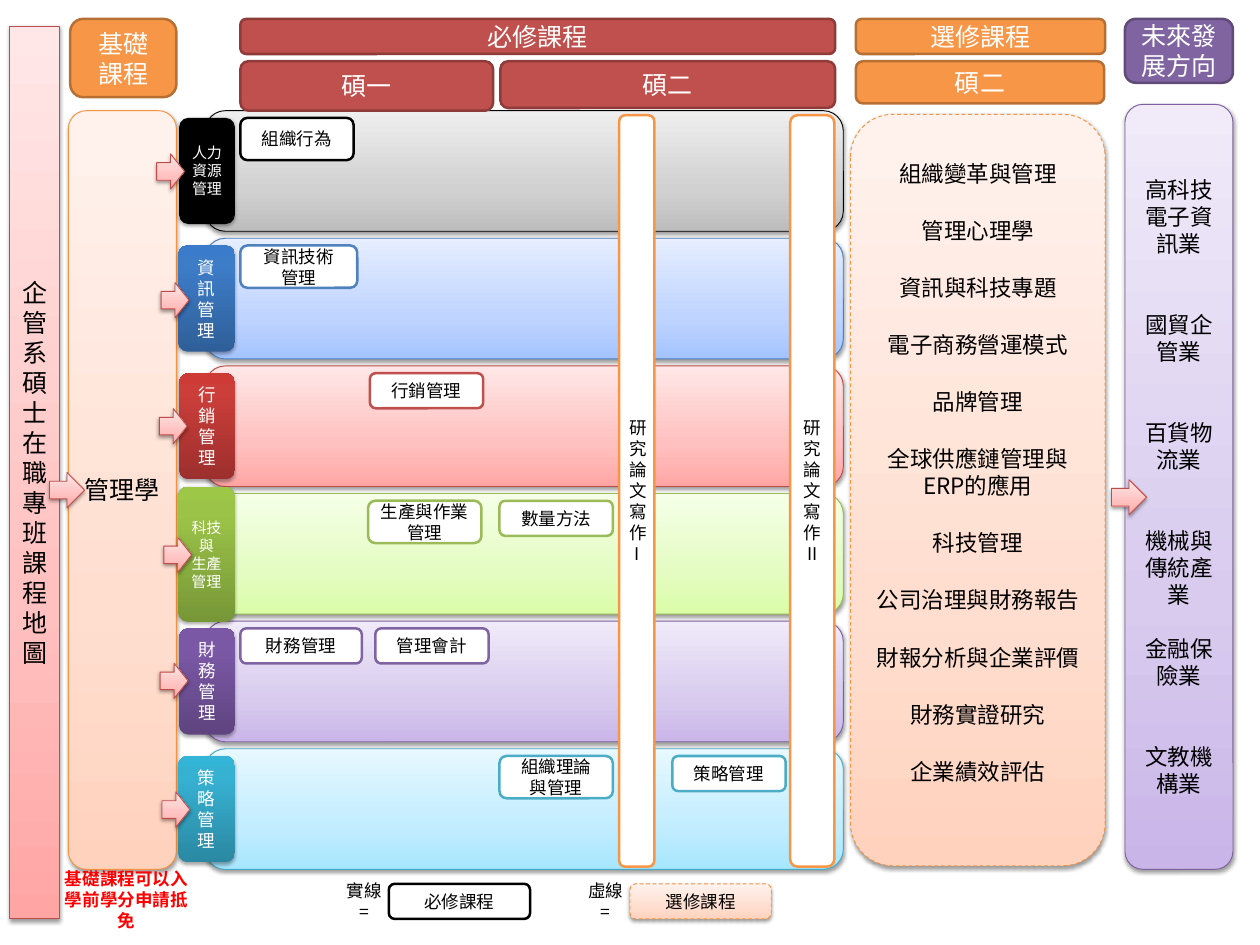
"""Build the course map slide of a part-time master's programme in business."""
from dataclasses import dataclass, replace
from typing import Optional, Union

from pptx import Presentation
from pptx.dml.color import RGBColor
from pptx.enum.dml import MSO_LINE
from pptx.enum.shapes import MSO_SHAPE
from pptx.enum.text import MSO_ANCHOR, MSO_AUTO_SIZE, PP_ALIGN
from pptx.oxml import parse_xml
from pptx.oxml.ns import nsdecls, qn
from pptx.util import Inches, Pt

ROUND, ARROW = MSO_SHAPE.ROUNDED_RECTANGLE, MSO_SHAPE.RIGHT_ARROW
MIDDLE, CENTER = MSO_ANCHOR.MIDDLE, PP_ALIGN.CENTER
NO_FIT, DASH = MSO_AUTO_SIZE.NONE, MSO_LINE.DASH
FONT = "Noto Sans CJK SC"
rgb = RGBColor.from_string

BLACK, WHITE, BRIGHT_RED = rgb("000000"), rgb("FFFFFF"), rgb("FF0000")
RED, RED_EDGE, RED_LINE = rgb("C0504D"), rgb("8E3B39"), rgb("BF4C48")
ORANGE, ORANGE_EDGE, ORANGE_LINE = rgb("F79646"), rgb("B76F34"), rgb("F69240")
PURPLE, PURPLE_EDGE, PURPLE_LINE = rgb("8064A2"), rgb("5F4A78"), rgb("7D60A0")
BLUE, BLUE_LINE = rgb("4F81BD"), rgb("4B7EBC")
GREEN, GREEN_LINE = rgb("9BBB59"), rgb("98B955")
AQUA, AQUA_LINE = rgb("4BACC6"), rgb("46AAC5")


@dataclass(frozen=True)
class Gradient:
    colors: tuple[RGBColor, RGBColor, RGBColor]
    middle: int = 35


GRAY_PALE = Gradient((rgb("BDBDBD"), rgb("D1D1D1"), rgb("EEEEEE")))
BLUE_PALE = Gradient((rgb("A4C4FF"), rgb("BFD4FF"), rgb("E6EEFF")))
RED_PALE = Gradient((rgb("FFA6A5"), rgb("FFC0BF"), rgb("FFE7E7")))
GREEN_PALE = Gradient((rgb("DAFDA7"), rgb("E4FCC2"), rgb("F5FFE7")))
PURPLE_PALE = Gradient((rgb("C9B5E8"), rgb("D8CBEE"), rgb("F0EAF9")))
AQUA_PALE = Gradient((rgb("A7E6FF"), rgb("C1EDFF"), rgb("E7F8FF")))
ORANGE_PALE = Gradient((rgb("FFD2BD"), rgb("FFDED0"), rgb("FFF2ED")))
BLUE_DEEP = Gradient((rgb("2F5F99"), rgb("3D7CC7"), rgb("3A7CCB")), 80)
RED_DEEP = Gradient((rgb("9C2F2D"), rgb("CB3E3A"), rgb("CE3B37")), 80)
GREEN_DEEP = Gradient((rgb("779737"), rgb("9BC348"), rgb("9DC746")), 80)
PURPLE_DEEP = Gradient((rgb("5F4480"), rgb("7B58A6"), rgb("7C57A8")), 80)
AQUA_DEEP = Gradient((rgb("2A88A2"), rgb("37B1D2"), rgb("34B4D6")), 80)


@dataclass(frozen=True)
class Style:
    fill: Union[RGBColor, Gradient, None] = None
    line: Optional[RGBColor] = None
    width: float = 2
    color: RGBColor = BLACK
    size: int = 14
    shadow: int = 0
    dashed: bool = False
    bold: bool = False


@dataclass(frozen=True)
class Area:
    name: str
    size: int
    pale: Gradient
    pale_line: RGBColor
    deep: Union[RGBColor, Gradient]
    accent: RGBColor
    arrow: tuple[float, float]


@dataclass(frozen=True)
class Course:
    name: str
    row: int
    left: float
    width: float = 1.26
    height: float = 0.39


def pale(fill: Gradient, line: RGBColor, size: int = 14, dashed: bool = False) -> Style:
    """Return the style of a softly shaded panel."""
    return Style(fill, line, 0.75, size=size, shadow=38, dashed=dashed)


RED_HEAD = Style(RED, RED_EDGE, color=WHITE, size=20)
ORANGE_HEAD = Style(ORANGE, ORANGE_EDGE, color=WHITE, size=20)
PURPLE_HEAD = Style(PURPLE, PURPLE_EDGE, color=WHITE, size=20)
ARROW_STYLE = pale(RED_PALE, RED_LINE)
THESIS = Style(WHITE, ORANGE)
PLAIN = Style()

AREAS = (
    Area("人力資源\n管理", 12, GRAY_PALE, BLACK, BLACK, BLACK, (1.74, 1.71)),
    Area("資訊管理", 14, BLUE_PALE, BLUE_LINE, BLUE_DEEP, BLUE, (1.79, 3.14)),
    Area("行銷管理", 14, RED_PALE, RED_LINE, RED_DEEP, RED, (1.77, 4.54)),
    Area("科技與\n生產管理", 12, GREEN_PALE, GREEN_LINE, GREEN_DEEP, GREEN, (1.82, 5.97)),
    Area("財務管理", 14, PURPLE_PALE, PURPLE_LINE, PURPLE_DEEP, PURPLE, (1.78, 7.37)),
    Area("策略管理", 14, AQUA_PALE, AQUA_LINE, AQUA_DEEP, AQUA, (1.8, 8.8)),
)
COURSES = (
    Course("組織行為", 0, 2.67, height=0.47),
    Course("資訊技術\n管理", 1, 2.67, 1.3, 0.47),
    Course("行銷管理", 2, 4.11),
    Course("生產與作業\n管理", 3, 4.09, height=0.47),
    Course("數量方法", 3, 5.55),
    Course("財務管理", 4, 2.67, 1.35),
    Course("管理會計", 4, 4.17),
    Course("組織理論\n與管理", 5, 5.55, height=0.47),
    Course("策略管理", 5, 7.47),
)
ELECTIVES = ("組織變革與管理", "管理心理學", "資訊與科技專題", "電子商務營運模式", "品牌管理",
             "全球供應鏈管理與ERP的應用", "科技管理", "公司治理與財務報告",
             "財報分析與企業評價", "財務實證研究", "企業績效評估")
CAREERS = ("高科技電子資訊業", "國貿企管業", "百貨物流業", "機械與傳統產業", "金融保險業", "文教機構業")
CAREER_GAPS = (0, 43.2, 43.2, 43.2, 21.6, 43.2)
BAND_TOP, BAND_STEP, BAND_PAD = 1.23, 1.418, 0.08


def set_gradient(sp, gradient: Gradient) -> None:
    """Fill a shape with a three-stop gradient that rises from the bottom."""
    sp.fill.gradient()
    sp.fill.gradient_angle = 90
    stops = sp._element.spPr.find(".//" + qn("a:gsLst"))
    stops[:] = [parse_xml(f'<a:gs {nsdecls("a")} pos="{pos * 1000}"><a:srgbClr val="{color}"/></a:gs>')
                for pos, color in zip((0, gradient.middle, 100), gradient.colors)]


def set_style(sp, style: Style) -> None:
    """Apply the fill, outline and shadow of a style."""
    if isinstance(style.fill, Gradient):
        set_gradient(sp, style.fill)
    elif style.fill is None:
        sp.fill.background()
    else:
        sp.fill.solid()
        sp.fill.fore_color.rgb = style.fill
    if style.line is None:
        sp.line.fill.background()
    else:
        sp.line.color.rgb = style.line
        sp.line.width = Pt(style.width)
        if style.dashed:
            sp.line.dash_style = DASH
    sp.shadow.inherit = False
    if style.shadow:
        sp._element.spPr.find(qn("a:effectLst")).append(parse_xml(
            f'<a:outerShdw {nsdecls("a")} blurRad="{Pt(3.1)}" dist="{Pt(1.6)}" dir="5400000" rotWithShape="0">'
            f'<a:srgbClr val="000000"><a:alpha val="{style.shadow * 1000}"/></a:srgbClr></a:outerShdw>'))


def set_text(sp, text: str, style: Style, gaps: tuple = ()) -> None:
    """Write centred paragraphs, with optional space before each one."""
    tf = sp.text_frame
    tf.word_wrap, tf.auto_size, tf.vertical_anchor = True, NO_FIT, MIDDLE
    for i, line in enumerate(text.split("\n")):
        p = tf.add_paragraph() if i else tf.paragraphs[0]
        p.alignment = CENTER
        if gaps and gaps[i]:
            p.space_before = Pt(gaps[i])
        r = p.add_run()
        r.text = line
        r.font.name, r.font.size, r.font.bold = FONT, Pt(style.size), style.bold
        r.font.color.rgb = style.color
        r.font._element.find(qn("a:latin")).addnext(parse_xml(f'<a:ea {nsdecls("a")} typeface="{FONT}"/>'))


def add_box(shapes, x: float, y: float, w: float, h: float, style: Style,
            text: str = "", gaps: tuple = (), kind: MSO_SHAPE = ROUND):
    """Add one styled shape with its text."""
    sp = shapes.add_shape(kind, Inches(x), Inches(y), Inches(w), Inches(h))
    set_style(sp, style)
    if text:
        set_text(sp, text, style, gaps)
    return sp


def add_title(sp, text: str) -> None:
    """Turn the title placeholder into the vertical strip on the left."""
    sp.left, sp.top, sp.width, sp.height = Inches(0.11), Inches(0.29), Inches(0.55), Inches(9.92)
    sp._element.spPr.insert(1, parse_xml(f'<a:prstGeom {nsdecls("a")} prst="roundRect"><a:avLst/></a:prstGeom>'))
    style = pale(RED_PALE, RED_LINE, 20)
    set_style(sp, style)
    set_text(sp, text, style)


def add_areas(shapes) -> None:
    """Add the subject bands, their courses, thesis columns, labels and arrows."""
    tops = [BAND_TOP + BAND_STEP * i for i in range(len(AREAS))]
    bands = shapes.add_group_shape().shapes
    for area, top in zip(AREAS, tops):
        add_box(bands, 2.28, top, 7.09, 1.34, pale(area.pale, area.pale_line))
    for c in COURSES:
        add_box(shapes, c.left, tops[c.row] + BAND_PAD, c.width, c.height,
                Style(WHITE, AREAS[c.row].accent), c.name)
    add_box(shapes, 8.78, 1.28, 0.49, 8.35, THESIS, "研究論文寫作II")
    add_box(shapes, 6.88, 1.28, 0.39, 8.35, THESIS, "研究論文寫作I")
    labels = shapes.add_group_shape().shapes
    for i, (area, top) in enumerate(zip(AREAS, tops)):
        y, h = (5.41, 1.5) if i == 3 else (top + BAND_PAD, 1.18)
        style = Style(area.deep, color=WHITE, size=area.size, shadow=35)
        add_box(labels, 1.98 if i % 2 else 1.99, y, 0.63 if i % 2 else 0.62, h, style, area.name)
    for area in AREAS:
        add_box(labels, *area.arrow, 0.31, 0.39, ARROW_STYLE, kind=ARROW)


def main() -> None:
    """Build and save the slide."""
    prs = Presentation()
    prs.slide_width, prs.slide_height = Inches(14), Inches(10.5)
    s = prs.slides.add_slide(prs.slide_layouts[5])
    shapes = s.shapes
    add_title(shapes.title, "企管系碩士在職專班課程地圖")
    add_box(shapes, 12.5, 0.21, 1.2, 0.71, PURPLE_HEAD, "未來發展方向")
    add_box(shapes, 12.5, 1.16, 1.2, 8.5, pale(PURPLE_PALE, PURPLE_LINE, 18), "\n".join(CAREERS), CAREER_GAPS)
    add_box(shapes, 0.78, 0.21, 1.18, 0.87, ORANGE_HEAD, "基礎\n課程")
    add_box(shapes, 0.76, 1.23, 1.2, 8.43, pale(ORANGE_PALE, ORANGE_LINE, 20), "管理學")
    add_areas(shapes)
    add_box(shapes, 2.67, 0.21, 6.61, 0.39, RED_HEAD, "必修課程")
    add_box(shapes, 2.67, 0.68, 2.81, 0.55, RED_HEAD, "碩一")
    add_box(shapes, 5.56, 0.68, 3.72, 0.52, RED_HEAD, "碩二")
    add_box(shapes, 9.51, 0.21, 2.77, 0.39, ORANGE_HEAD, "選修課程")
    add_box(shapes, 9.51, 0.68, 2.76, 0.47, ORANGE_HEAD, "碩二")
    elective = pale(ORANGE_PALE, ORANGE_LINE, 18, dashed=True)
    sp = add_box(shapes, 9.45, 1.27, 2.83, 8.35, elective, "\n".join(ELECTIVES), (0,) + (24,) * 10)
    sp.text_frame.margin_bottom = Inches(0.44)
    for x, y in ((0.55, 5.25), (12.35, 5.33)):
        add_box(shapes, x, y, 0.39, 0.39, ARROW_STYLE, kind=ARROW)
    add_box(shapes, 4.32, 9.82, 1.57, 0.39, Style(WHITE, BLACK), "必修課程")
    add_box(shapes, 7, 9.82, 1.57, 0.39, replace(elective, size=14), "選修課程")
    add_box(shapes, 3.7, 9.82, 0.7, 0.39, PLAIN, "實線=")
    add_box(shapes, 6.38, 9.82, 0.7, 0.39, PLAIN, "虛線=")
    add_box(shapes, 0.54, 9.66, 1.73, 0.68, Style(color=BRIGHT_RED, bold=True), "基礎課程可以入學前學分申請抵免")
    prs.save("out.pptx")


if __name__ == "__main__":
    main()
